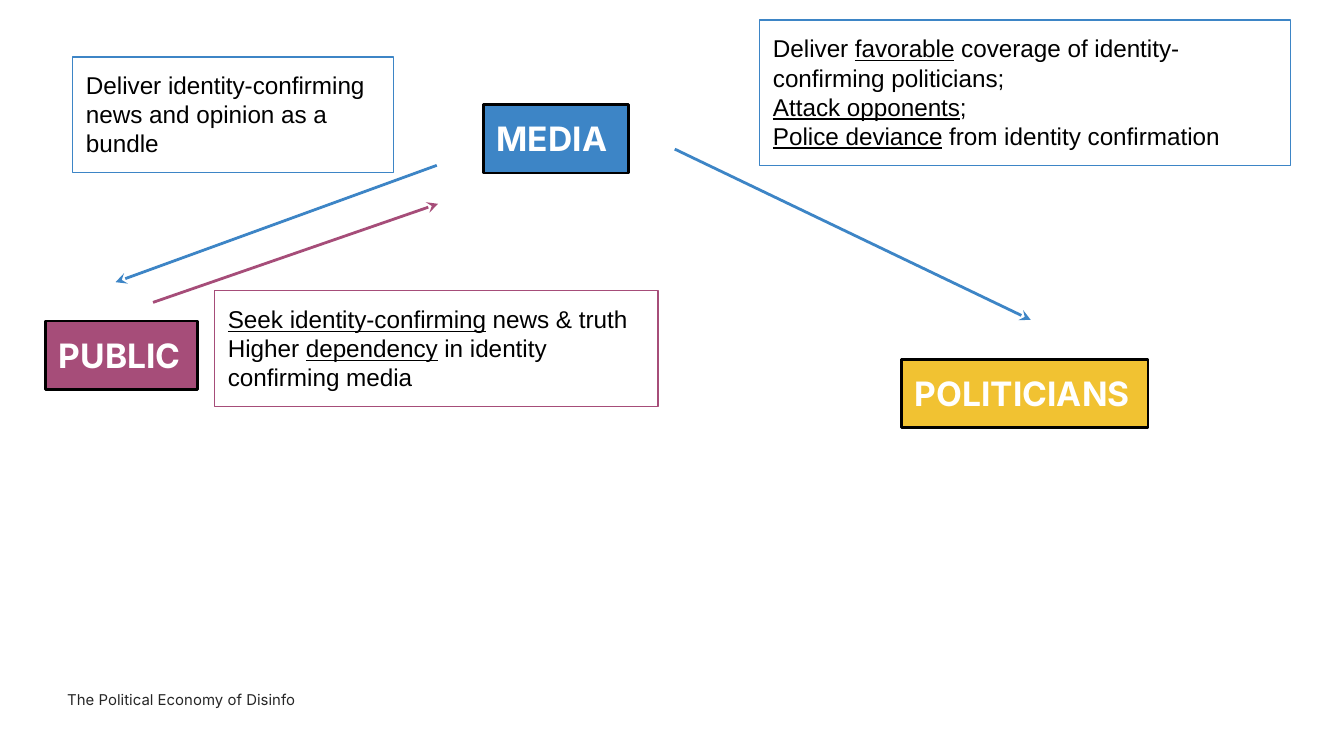
import pptx
import pptx.dml.color
import pptx.enum.shapes
import pptx.enum.text
import pptx.oxml.ns
import pptx.util
from lxml import etree

Pt = pptx.util.Pt
RGBColor = pptx.dml.color.RGBColor

BLUE = RGBColor(0x3D, 0x85, 0xC6)
PLUM = RGBColor(0xA6, 0x4D, 0x79)
GOLD = RGBColor(0xF1, 0xC2, 0x32)
BLACK = RGBColor(0, 0, 0)
WHITE = RGBColor(0xFF, 0xFF, 0xFF)
DARK_GRAY = RGBColor(0x26, 0x26, 0x26)


def style_paragraph(paragraph, font_name, size, color, bold=False):
    paragraph.alignment = pptx.enum.text.PP_ALIGN.LEFT
    paragraph.font.name = font_name
    paragraph.font.size = Pt(size)
    paragraph.font.color.rgb = color
    paragraph.font.bold = bold


def add_box(slide, box, line_color, line_width):
    """Add an unfilled, outlined rectangle with even text insets."""
    shape = slide.shapes.add_shape(
        pptx.enum.shapes.MSO_SHAPE.RECTANGLE, *map(Pt, box))
    shape.shadow.inherit = False
    shape.fill.background()
    shape.line.color.rgb = line_color
    shape.line.width = Pt(line_width)
    frame = shape.text_frame
    frame.word_wrap = True
    frame.vertical_anchor = pptx.enum.text.MSO_ANCHOR.TOP
    frame.margin_left = frame.margin_right = Pt(7.2)
    frame.margin_top = frame.margin_bottom = Pt(7.2)
    return shape


def add_actor(slide, box, name, color):
    shape = add_box(slide, box, BLACK, 1.5)
    shape.fill.solid()
    shape.fill.fore_color.rgb = color
    paragraph = shape.text_frame.paragraphs[0]
    paragraph.text = name
    style_paragraph(paragraph, "Inter", 18, WHITE, bold=True)


def add_note(slide, box, color, lines):
    """Each line is a list of (text, underlined) pairs."""
    frame = add_box(slide, box, color, 0.75).text_frame
    for index, line in enumerate(lines):
        paragraph = frame.add_paragraph() if index else frame.paragraphs[0]
        style_paragraph(paragraph, "Arial", 13, BLACK)
        for text, underlined in line:
            run = paragraph.add_run()
            run.text = text
            run.font.underline = underlined


def add_arrow(slide, start, end, color):
    connector = slide.shapes.add_connector(
        pptx.enum.shapes.MSO_CONNECTOR.STRAIGHT, *map(Pt, start + end))
    connector.line.color.rgb = color
    connector.line.width = Pt(1.5)
    qn = pptx.oxml.ns.qn
    etree.SubElement(connector.line._get_or_add_ln(), qn("a:tailEnd"), type="stealth")
    etree.SubElement(connector._element.spPr, qn("a:effectLst"))


def add_footer(slide, box, text):
    frame = slide.shapes.add_textbox(*map(Pt, box)).text_frame
    frame.word_wrap = True
    frame.margin_left = frame.margin_right = 0
    frame.margin_top = frame.margin_bottom = 0
    paragraph = frame.paragraphs[0]
    paragraph.text = text
    paragraph.line_spacing = 1.2
    style_paragraph(paragraph, "Inter", 8, DARK_GRAY)


def main():
    presentation = pptx.Presentation()
    presentation.slide_width = Pt(720)
    presentation.slide_height = Pt(405)
    slide = presentation.slides.add_slide(presentation.slide_layouts[6])

    # Actors
    add_actor(slide, (24.5, 172, 81.5, 36.5), "PUBLIC", PLUM)
    add_actor(slide, (483, 192.7, 132, 36.5), "POLITICIANS", GOLD)
    add_actor(slide, (259, 56.2, 77.8, 36.5), "MEDIA", BLUE)

    # Flows between the actors
    add_arrow(slide, (82, 162), (234.7, 109.2), PLUM)
    add_arrow(slide, (234, 88.6), (61.9, 151.2), BLUE)
    add_arrow(slide, (361.5, 79.9), (552.2, 171.4), BLUE)

    # What each flow carries
    add_note(slide, (407, 10.8, 284.4, 77.8), BLUE, [
        [("Deliver ", False), ("favorable", True),
         (" coverage of identity-confirming politicians;", False)],
        [("Attack opponents", True), (";", False)],
        [("Police deviance", True), (" from identity confirmation", False)],
    ])
    add_note(slide, (39, 30.5, 172, 62), BLUE, [
        [("Deliver identity-confirming news and opinion as a bundle", False)],
    ])
    add_note(slide, (115, 155.8, 237.6, 62), PLUM, [
        [("Seek identity-confirming", True), (" news & truth", False)],
        [("Higher ", False), ("dependency", True),
         (" in identity confirming media", False)],
    ])

    # Footer
    add_footer(slide, (36, 368, 128, 22.3), "The Political Economy of Disinfo")

    presentation.save("out.pptx")


if __name__ == "__main__":
    main()
